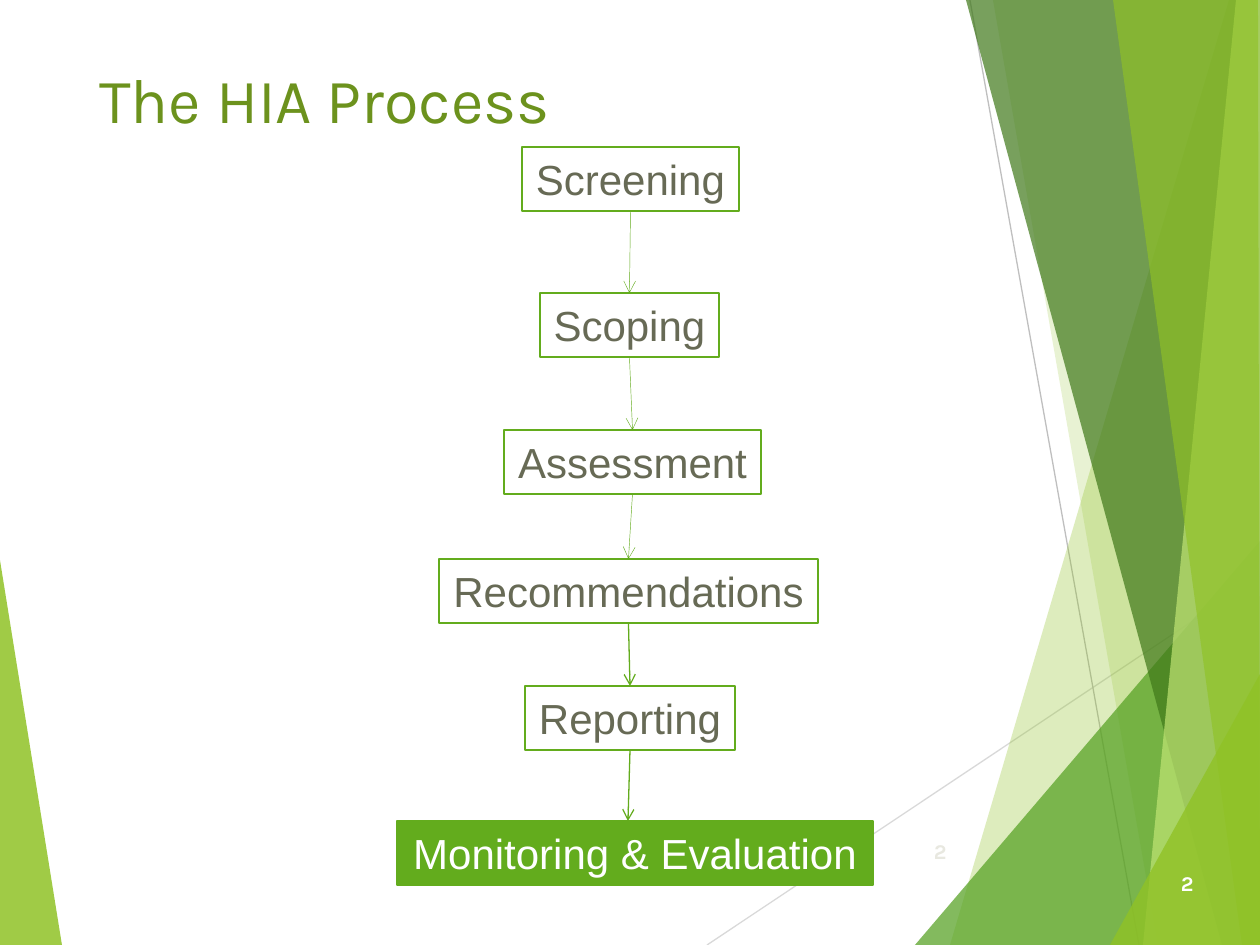
from lxml.etree import SubElement
from pptx import Presentation
from pptx.dml.color import RGBColor
from pptx.enum.shapes import MSO_CONNECTOR, MSO_SHAPE
from pptx.enum.text import MSO_ANCHOR, PP_ALIGN
from pptx.oxml.ns import qn
from pptx.util import Pt

PX = 914400 / 126
BOX_HEIGHT = 64


def paint(color_format, hex_color):
    color_format.rgb = RGBColor.from_string(hex_color)


def write(box, text, align, color, **font_format):
    frame = box.text_frame
    para = frame.paragraphs[0]
    para.alignment = align
    span = para.add_run()
    span.text = text
    for name, value in font_format.items():
        setattr(span.font, name, value)
    paint(span.font.color, color)


deck = Presentation()
deck.slide_width, deck.slide_height = round(1260 * PX), round(945 * PX)
page = deck.slides.add_slide(deck.slide_layouts[6])

background_lines = [
    ((707, 945), (1260, 576), "D9D9D9", 0.75),
    ((970, 0), (1139, 945), "BFBFBF", 0.75),
]
facets = [
    ("90C226", 85, [(0, 560), (62, 945), (0, 945)]),
    ("90C226", 30, [(1229, 0), (950, 945), (1260, 945), (1260, 0)]),
    ("90C226", 20, [(993, 0), (1158, 945), (1260, 945), (1260, 0)]),
    ("54A021", 72, [(915, 945), (1260, 541), (1260, 945)]),
    ("3F7819", 70, [(966, 0), (1222, 945), (1260, 945), (1260, 0)]),
    ("C0E474", 70, [(1236, 0), (1143, 945), (1260, 945), (1260, 0)]),
    ("90C226", 65, [(1113, 0), (1242, 945), (1260, 945), (1258, 0)]),
    ("90C226", 80, [(1110, 945), (1260, 674), (1260, 945)]),
]
steps = [
    ("Screening", 522, 147, 217),
    ("Scoping", 540, 293, 179),
    ("Assessment", 504, 430, 257),
    ("Recommendations", 439, 559, 379),
    ("Reporting", 525, 686, 210),
    ("Monitoring & Evaluation", 397, 821, 476),
]
arrow_widths = [0.25, 0.25, 0.25, 0.75, 0.75]

for color, opacity, points in facets:
    builder = page.shapes.build_freeform(*points[0], scale=PX)
    builder.add_line_segments(points[1:], close=True)
    facet = builder.convert_to_shape()
    facet.shadow.inherit = False
    facet.line.fill.background()
    facet.fill.solid()
    paint(facet.fill.fore_color, color)
    color_node = facet.fill._xPr.find(qn("a:solidFill"))[0]
    SubElement(color_node, qn("a:alpha"), val=str(opacity * 1000))

boxes = []
for text, left, top, width in steps:
    is_last = text == steps[-1][0]
    area = [round(length * PX) for length in (left, top, width, BOX_HEIGHT)]
    box = page.shapes.add_shape(MSO_SHAPE.RECTANGLE, *area)
    box.shadow.inherit = False
    box.line.width = Pt(0.75)
    paint(box.line.color, "63AC1D")
    if is_last:
        box.fill.solid()
        paint(box.fill.fore_color, "63AC1D")
    else:
        box.fill.background()
    box.text_frame.word_wrap = False
    box.text_frame.vertical_anchor = MSO_ANCHOR.MIDDLE
    write(box, text, PP_ALIGN.CENTER, "FFFFFF" if is_last else "676A55",
          name="Arial", size=Pt(24))
    boxes.append(box)

process_lines = [((630, 750), (628, 821), "63AC1D", width) for width in arrow_widths]
for index, (start, end, color, width) in enumerate(background_lines + process_lines):
    ends = [round(length * PX) for length in start + end]
    line = page.shapes.add_connector(MSO_CONNECTOR.STRAIGHT, *ends)
    line.line.width = Pt(width)
    paint(line.line.color, color)
    SubElement(line._element.spPr, qn("a:effectLst"))
    step = index - len(background_lines)
    if step < 0:
        page.shapes._spTree.insert(3 + index, line._element)
        continue
    line.begin_connect(boxes[step], 2)
    if step < len(process_lines) - 1:
        line.end_connect(boxes[step + 1], 0)
    SubElement(line.line._get_or_add_ln(), qn("a:tailEnd"), type="arrow")

labels = [
    ("The HIA Process", (87, 54, 874, 181), PP_ALIGN.LEFT, "6C921D", 36, False),
    ("2", (888, 832, 71, 50), PP_ALIGN.RIGHT, "E8E8E0", 12, True),
    ("2", (1135, 864, 71, 50), PP_ALIGN.RIGHT, "FFFFFF", 12, True),
]
for text, area, align, color, size, bold in labels:
    label = page.shapes.add_textbox(*[round(length * PX) for length in area])
    label.text_frame.word_wrap = True
    write(label, text, align, color, name="Karla", size=Pt(size), bold=bold)

deck.save("out.pptx")
